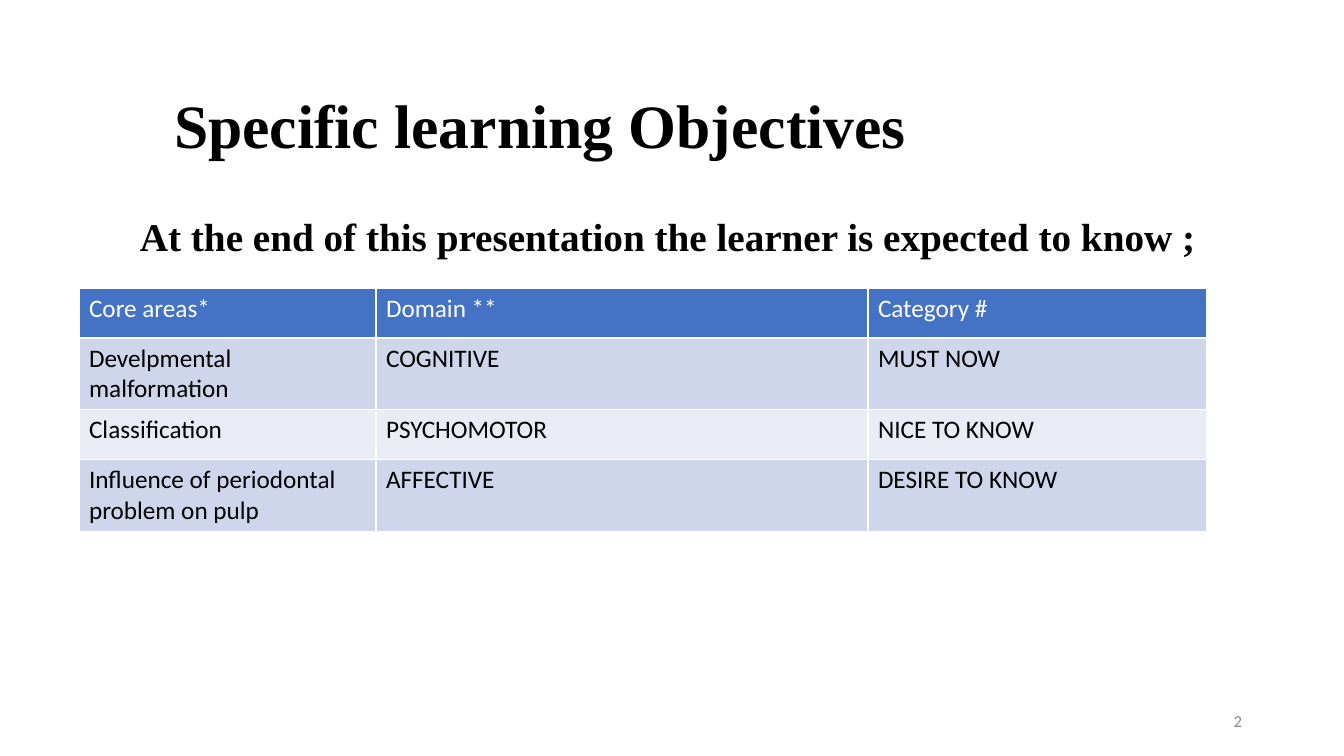
from pptx import Presentation
from pptx.dml.color import RGBColor
from pptx.enum.text import MSO_ANCHOR, MSO_AUTO_SIZE, PP_ALIGN
from pptx.util import Emu, Pt

TITLE = "Specific learning Objectives"
INTRO = "At the end of this presentation the learner is expected to know ;"
NUMBER = "2"
ROWS = [
    ("Core areas*", "Domain **", "Category #"),
    ("Develpmental malformation", "COGNITIVE", "MUST NOW"),
    ("Classification", "PSYCHOMOTOR", "NICE TO KNOW"),
    ("Influence of periodontal problem on pulp", "AFFECTIVE", "DESIRE TO KNOW"),
]
COL_WIDTHS = (297, 492, 339)
ROW_HEIGHTS = (50, 71, 50, 71)
TITLE_BOX = (164, 68, 1021, 122)
INTRO_BOX = (130, 207, 1080, 57)
NUMBER_BOX = (950, 701, 302, 40)
TABLE_BOX = (79, 288, sum(COL_WIDTHS), sum(ROW_HEIGHTS))

SERIF, SANS = "Times New Roman", "Calibri"
BLACK = RGBColor(0x00, 0x00, 0x00)
WHITE = RGBColor(0xFF, 0xFF, 0xFF)
GRAY = RGBColor(0x8C, 0x8C, 0x8C)
BLUE = RGBColor(0x44, 0x72, 0xC4)
BANDS = (RGBColor(0xE9, 0xEB, 0xF5), RGBColor(0xCF, 0xD5, 0xEA))


def px(n):
    """Turn pixels into EMU."""
    return Emu(round(n * 914400 / 100.8))


def write(tf, text, font, size, color, bold=False, align=PP_ALIGN.LEFT):
    """Set the text of a frame and format its paragraph and run."""
    tf.text = text
    tf.word_wrap = True
    p = tf.paragraphs[0]
    p.alignment = align
    f = p.runs[0].font
    f.name, f.size, f.bold = font, Pt(size), bold
    f.color.rgb = color
    return p


def add_title(s):
    """Move and fill the title placeholder."""
    sp = s.shapes.title
    sp.left, sp.top, sp.width, sp.height = map(px, TITLE_BOX)
    tf = sp.text_frame
    p = write(tf, TITLE, SERIF, 44, BLACK, bold=True)
    p.line_spacing = 0.9
    tf.auto_size = MSO_AUTO_SIZE.NONE
    tf.vertical_anchor = MSO_ANCHOR.MIDDLE


def add_objectives(s):
    """Add the table of objectives."""
    table = s.shapes.add_table(len(ROWS), len(COL_WIDTHS), *map(px, TABLE_BOX)).table
    for col, width in zip(table.columns, COL_WIDTHS):
        col.width = px(width)
    for i, (texts, height) in enumerate(zip(ROWS, ROW_HEIGHTS)):
        table.rows[i].height = px(height)
        for j, text in enumerate(texts):
            cell = table.cell(i, j)
            cell.fill.solid()
            cell.fill.fore_color.rgb = BANDS[i % 2] if i else BLUE
            write(cell.text_frame, text, SANS, 18, BLACK if i else WHITE)


def main():
    """Build and save the slide."""
    prs = Presentation()
    prs.slide_width, prs.slide_height = px(1344), px(756)
    s = prs.slides.add_slide(prs.slide_layouts[5])
    add_title(s)
    add_objectives(s)
    intro = s.shapes.add_textbox(*map(px, INTRO_BOX)).text_frame
    write(intro, INTRO, SERIF, 28, BLACK, bold=True)
    number = s.shapes.add_textbox(*map(px, NUMBER_BOX)).text_frame
    write(number, NUMBER, SANS, 12, GRAY, align=PP_ALIGN.RIGHT)
    number.vertical_anchor = MSO_ANCHOR.MIDDLE
    prs.save("out.pptx")


if __name__ == "__main__":
    main()
